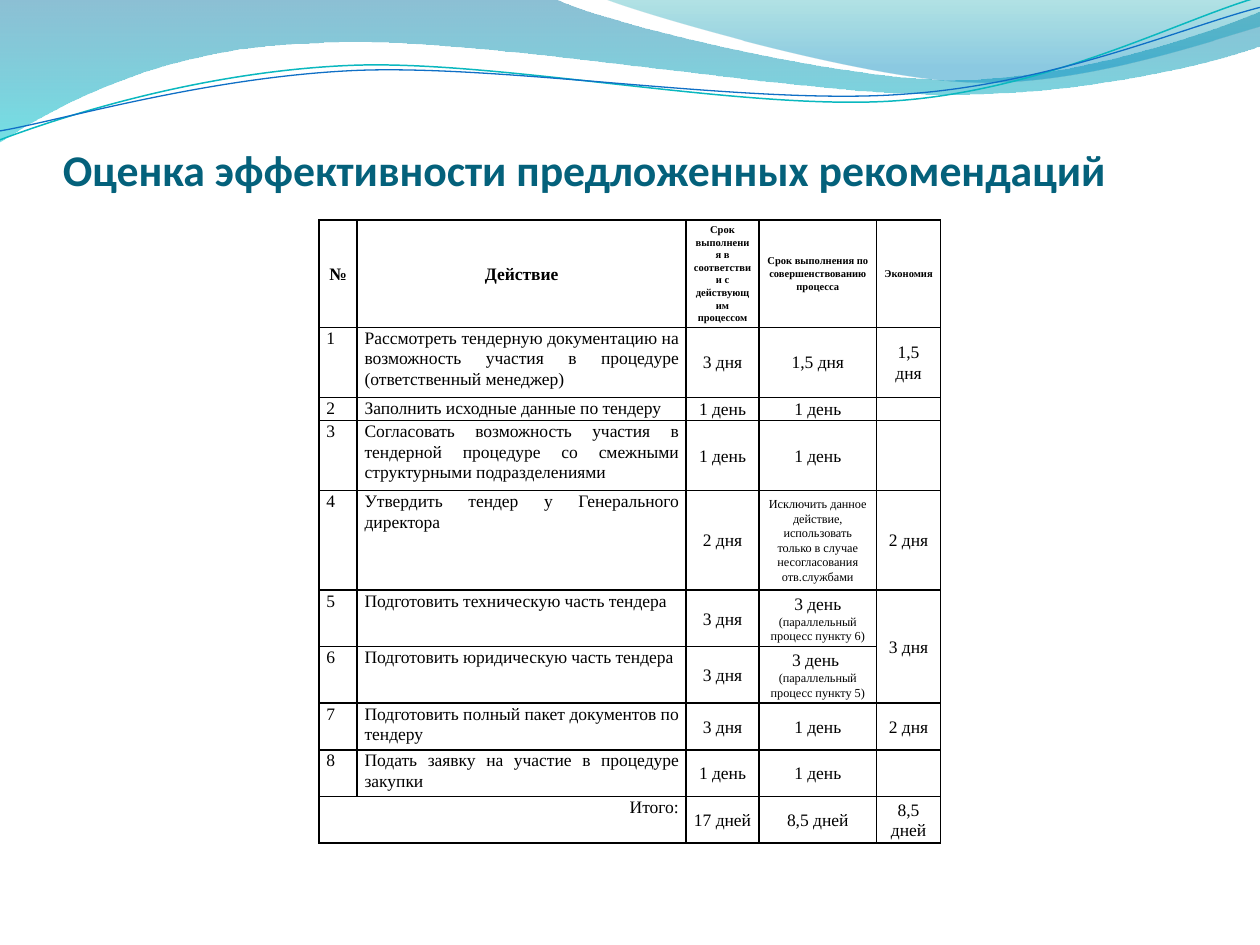
from lxml import etree
from pptx import Presentation
from pptx.dml.color import RGBColor
from pptx.enum.text import MSO_ANCHOR, PP_ALIGN
from pptx.oxml.ns import qn
from pptx.util import Cm, Pt

CENTER, JUSTIFY, RIGHT = PP_ALIGN.CENTER, PP_ALIGN.JUSTIFY, PP_ALIGN.RIGHT
LEFT = PP_ALIGN.LEFT
TOP, MIDDLE, BOTTOM = MSO_ANCHOR.TOP, MSO_ANCHOR.MIDDLE, MSO_ANCHOR.BOTTOM

BLACK = RGBColor(0x00, 0x00, 0x00)
TITLE_COLOR = RGBColor(0x04, 0x61, 0x7B)
DEEP_BLUE = RGBColor(0x00, 0x74, 0xA1)
CYAN = RGBColor(0x00, 0xC6, 0xCF)
TEAL = RGBColor(0x00, 0xA1, 0xA9)
SKY_BLUE = RGBColor(0x00, 0x8B, 0xBF)
TEAL_LINE = RGBColor(0x0A, 0xB8, 0xBF)
BLUE_LINE = RGBColor(0x0F, 0x6F, 0xC6)

BODY_SIZE, NOTE_SIZE, SMALL_HEADER_SIZE = 10, 7, 6

BACK_WAVE = [
    [(0, 0)], [(11.18, -0.03)],
    [(12.09, 0.43), (16.87, 1.6), (19.25, 1.6)],
    [(21.67, 1.6), (24.33, 0.66), (25.4, 0.23)],
    [(25.43, 0.91)],
    [(24.97, 1.12), (22.1, 1.93), (18.95, 1.9)],
    [(15.8, 1.9), (9.7, 0.71), (6.53, 0.86)],
    [(3.28, 0.91), (1.17, 2.11), (-0.03, 2.87)],
    [(0, 0)],
]
FRONT_WAVE = [
    [(12.17, -0.03)],
    [(12.93, 0.28), (17.32, 1.57), (19.53, 1.65)],
    [(21.74, 1.75), (24.41, 0.81), (25.4, 0.53)],
    [(25.4, 0)],
    [(12.17, -0.03)],
]
TEAL_CURVE = [
    [(0, 2.82)],
    [(1.22, 2.36), (4.01, 1.45), (7.04, 1.32)],
    [(10.03, 1.19), (15.06, 2.26), (18.11, 2.03)],
    [(21.16, 1.8), (23.83, 0.38), (25.35, -0.05)],
]
BLUE_CURVE = [
    [(0, 2.64)],
    [(1.19, 2.44), (4.17, 1.55), (7.19, 1.42)],
    [(10.24, 1.3), (15.16, 2.13), (18.21, 1.9)],
    [(21.23, 1.7), (23.9, 0.53), (25.4, 0.15)],
]

COLUMN_WIDTHS = [0.77, 6.63, 1.47, 2.37, 1.29]
ROW_HEIGHTS = [2.14, 1.41, 0.47, 1.41, 2.01, 1.14, 1.14, 0.94, 0.94, 0.94]
HEADERS = [
    "№", "Действие", "Срок выполнения в соответствии с действующим процессом",
    "Срок выполнения по совершенствованию процесса", "Экономия",
]
EXCLUDED = [[("Исключить данное действие, использовать только в случае "
              "несогласования отв.службами", NOTE_SIZE)]]
PARALLEL_6 = [[("3 день ", BODY_SIZE),
               ("(параллельный процесс пункту 6)", NOTE_SIZE)]]
PARALLEL_5 = [[("3 день ", BODY_SIZE)],
              [("(параллельный процесс пункту 5)", NOTE_SIZE)]]
ACTIONS = [
    ("Рассмотреть тендерную документацию на возможность участия в процедуре "
     "(ответственный менеджер)", "3 дня", "1,5 дня", "1,5 дня"),
    ("Заполнить исходные данные по тендеру ", "1 день", "1 день", ""),
    ("Согласовать возможность участия в тендерной процедуре со смежными "
     "структурными подразделениями", "1 день", "1 день", ""),
    ("Утвердить тендер у Генерального директора", "2 дня", EXCLUDED, "2 дня"),
    ("Подготовить техническую часть тендера", "3 дня", PARALLEL_6, "3 дня"),
    ("Подготовить юридическую часть тендера", "3 дня", PARALLEL_5, ""),
    ("Подготовить полный пакет документов по тендеру", "3 дня", "1 день", "2 дня"),
    ("Подать заявку на участие в процедуре закупки", "1 день", "1 день", ""),
]
TOTALS = ["Итого:", "", "17 дней", "8,5 дней", "8,5 дней"]


def add_text(paragraph, text, *, size=BODY_SIZE, font="Times New Roman",
             color=BLACK, bold=False, align=CENTER, spacing=1.07):
    paragraph.alignment = align
    paragraph.line_spacing = spacing
    if not text:
        etree.SubElement(paragraph._p, qn("a:endParaRPr"), sz=str(size * 100))
        return
    run = paragraph.add_run()
    run.text = text
    run.font.size = Pt(size)
    run.font.name = font
    run.font.bold = bold
    run.font.color.rgb = color


def add_outline(slide, steps, close):
    ends = [(Cm(x), Cm(y)) for x, y in (step[-1] for step in steps)]
    builder = slide.shapes.build_freeform(*ends[0])
    builder.add_line_segments(ends[1:], close=close)
    shape = builder.convert_to_shape()
    shape.shadow.inherit = False
    segments = list(shape._element.spPr.iter(qn("a:lnTo")))
    for segment, step in zip(segments, steps[1:]):
        if len(step) == 3:
            curve = etree.Element(qn("a:cubicBezTo"))
            for x, y in step:
                etree.SubElement(curve, qn("a:pt"), x=str(Cm(x) - shape.left),
                                 y=str(Cm(y) - shape.top))
            segment.getparent().replace(segment, curve)
    return shape


def add_wave(slide, steps, stops):
    shape = add_outline(slide, steps, True)
    shape.line.fill.background()
    shape.fill.gradient()
    shape.fill.gradient_angle = 270
    for stop, (position, color, _) in zip(shape.fill.gradient_stops, stops):
        stop.position = position
        stop.color.rgb = color
    for element, (_, _, opacity) in zip(shape._element.spPr.iter(qn("a:srgbClr")), stops):
        etree.SubElement(element, qn("a:alpha"), val=str(opacity * 1000))


def add_curve(slide, steps, color, width):
    shape = add_outline(slide, steps, False)
    shape.fill.background()
    shape.line.color.rgb = color
    shape.line.width = Pt(width)


def add_title(slide, text):
    box = slide.shapes.add_textbox(Cm(1.27), Cm(0.76), Cm(22.86), Cm(3.18))
    frame = box.text_frame
    frame.word_wrap = True
    frame.vertical_anchor = BOTTOM
    frame.margin_left = frame.margin_right = frame.margin_bottom = 0
    add_text(frame.paragraphs[0], text, size=25, font="Calibri",
             color=TITLE_COLOR, bold=True, align=LEFT, spacing=1.0)


def set_borders(cell):
    properties = cell._tc.get_or_add_tcPr()
    for side in ("a:lnL", "a:lnR", "a:lnT", "a:lnB"):
        line = etree.SubElement(properties, qn(side), w=str(Pt(1)))
        fill = etree.SubElement(line, qn("a:solidFill"))
        etree.SubElement(fill, qn("a:srgbClr"), val=str(BLACK))


def fill_cell(cell, content, anchor=MIDDLE, size=BODY_SIZE, **text_format):
    set_borders(cell)
    cell.fill.background()
    cell.vertical_anchor = anchor
    cell.margin_left = cell.margin_right = Cm(0.15)
    cell.margin_top = cell.margin_bottom = 0
    paragraphs = [[(content, size)]] if isinstance(content, str) else content
    frame = cell.text_frame
    for index, runs in enumerate(paragraphs):
        paragraph = frame.add_paragraph() if index else frame.paragraphs[0]
        for text, run_size in runs:
            add_text(paragraph, text, size=run_size, **text_format)


def add_schedule(slide):
    table = slide.shapes.add_table(
        len(ROW_HEIGHTS), len(COLUMN_WIDTHS), Cm(6.43), Cm(4.43),
        Cm(sum(COLUMN_WIDTHS)), Cm(sum(ROW_HEIGHTS))).table
    table.first_row = table.horz_banding = False
    for column, width in zip(table.columns, COLUMN_WIDTHS):
        column.width = Cm(width)
    for row, height in zip(table.rows, ROW_HEIGHTS):
        row.height = Cm(height)
    for column, text in enumerate(HEADERS):
        size = BODY_SIZE if column < 2 else SMALL_HEADER_SIZE
        fill_cell(table.cell(0, column), text, size=size, bold=True)
    body = [(str(number), *action) for number, action in enumerate(ACTIONS, 1)]
    for row, contents in enumerate(body + [TOTALS], 1):
        left_align = RIGHT if contents is TOTALS else JUSTIFY
        for column, content in enumerate(contents):
            is_left = column < 2
            fill_cell(table.cell(row, column), content,
                      anchor=TOP if is_left else MIDDLE,
                      align=left_align if is_left else CENTER)
    table.cell(5, 4).merge(table.cell(6, 4))
    table.cell(9, 0).merge(table.cell(9, 1))


def main():
    presentation = Presentation()
    presentation.slide_width, presentation.slide_height = Cm(25.4), Cm(19.05)
    slide = presentation.slides.add_slide(presentation.slide_layouts[6])
    add_wave(slide, BACK_WAVE, [(0, DEEP_BLUE, 45), (1, CYAN, 55)])
    add_wave(slide, FRONT_WAVE, [(0, TEAL, 30), (0.8, SKY_BLUE, 45)])
    add_curve(slide, TEAL_CURVE, TEAL_LINE, 0.85)
    add_curve(slide, BLUE_CURVE, BLUE_LINE, 0.75)
    add_title(slide, "Оценка эффективности предложенных рекомендаций")
    add_schedule(slide)
    presentation.save("out.pptx")


if __name__ == "__main__":
    main()
